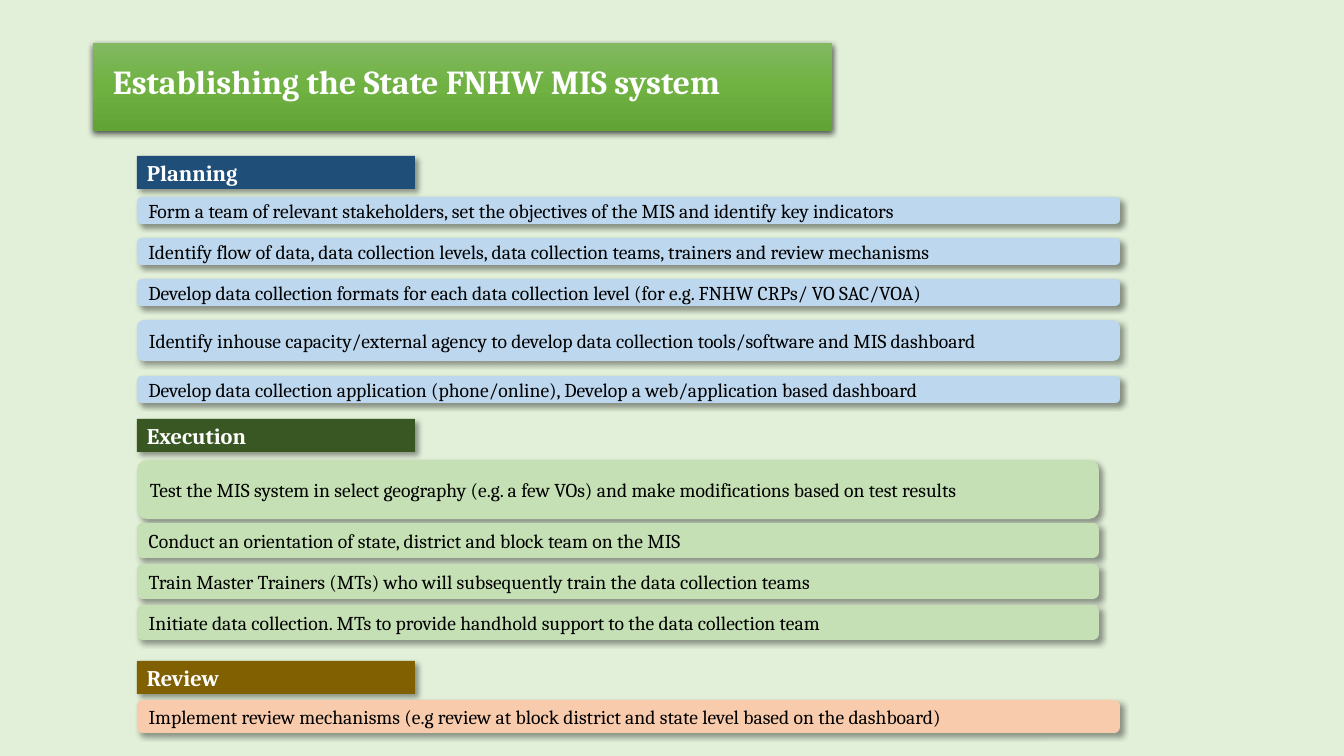
"""Build the slide on establishing the State FNHW MIS system."""
import copy
from dataclasses import dataclass

import lxml.etree
import pptx
import pptx.dml.color
import pptx.enum.shapes
import pptx.enum.text
import pptx.oxml.ns
import pptx.shapes.autoshape
import pptx.slide
import pptx.util

RGBColor = pptx.dml.color.RGBColor
Shapes = pptx.enum.shapes.MSO_SHAPE

EMU_PER_PX = 914400 / 100.8
FONT = "Cambria"
LEFT = 137
HEADING_WIDTH = 278
HEADING_HEIGHT = 33
INSET = 10

WHITE = RGBColor(0xFF, 0xFF, 0xFF)
BLACK = RGBColor(0x00, 0x00, 0x00)
BACKGROUND = RGBColor(0xE2, 0xF0, 0xD9)
NAVY = RGBColor(0x1F, 0x4E, 0x79)
LIGHT_BLUE = RGBColor(0xBD, 0xD7, 0xEE)
DARK_GREEN = RGBColor(0x38, 0x57, 0x23)
LIGHT_GREEN = RGBColor(0xC5, 0xE0, 0xB4)
BROWN = RGBColor(0x80, 0x60, 0x00)
PEACH = RGBColor(0xF8, 0xCB, 0xAD)
BANNER_STOPS = (
    (0.0, RGBColor(0x81, 0xB8, 0x61)),
    (0.5, RGBColor(0x6F, 0xB2, 0x42)),
    (1.0, RGBColor(0x62, 0xA3, 0x36)),
)


@dataclass(frozen=True)
class Box:
    """Place and size in px."""
    left: int
    top: int
    width: int
    height: int


@dataclass(frozen=True)
class Shadow:
    """Outer shadow: opacity in percent, lengths in points, angle in degrees."""
    opacity: int
    blur: float
    distance: float
    angle: int


@dataclass(frozen=True)
class Step:
    """One bar of a phase."""
    text: str
    top: int
    height: int


@dataclass(frozen=True)
class Phase:
    """A heading with its bars."""
    title: str
    top: int
    heading_color: RGBColor
    step_color: RGBColor
    step_width: int
    steps: tuple[Step, ...]


BANNER_SHADOW = Shadow(63, 4.5, 1.5, 90)
BAR_SHADOW = Shadow(40, 4, 3, 45)

PHASES = (
    Phase("Planning", 156, NAVY, LIGHT_BLUE, 983, (
        Step("Form a team of relevant stakeholders, set the objectives of the MIS and identify key indicators", 197, 27),
        Step("Identify flow of data, data collection levels, data collection teams, trainers and review mechanisms", 238, 27),
        Step("Develop data collection formats for each data collection level (for e.g. FNHW CRPs/ VO SAC/VOA)", 279, 27),
        Step("Identify inhouse capacity/external agency to develop data collection tools/software and MIS dashboard", 320, 41),
        Step("Develop data collection application (phone/online), Develop a web/application based dashboard", 376, 27),
    )),
    Phase("Execution", 419, DARK_GREEN, LIGHT_GREEN, 962, (
        Step("Test the MIS system in select geography (e.g. a few VOs) and make modifications based on test results", 460, 59),
        Step("Conduct an orientation of state, district and block team on the MIS", 523, 35),
        Step("Train Master Trainers (MTs) who will subsequently train the data collection teams", 564, 35),
        Step("Initiate data collection. MTs to provide handhold support to the data collection team", 605, 35),
    )),
    Phase("Review", 661, BROWN, PEACH, 983, (
        Step("Implement review mechanisms (e.g review at block district and state level based on the dashboard)", 700, 33),
    )),
)


def px(length: int) -> pptx.util.Emu:
    """Turn px into EMU."""
    return pptx.util.Emu(round(length * EMU_PER_PX))


def place(box: Box) -> tuple[pptx.util.Emu, ...]:
    """Give the box in EMU."""
    return px(box.left), px(box.top), px(box.width), px(box.height)


def write(frame, text: str, *, size: int, color: RGBColor, bold: bool = False,
          inset: int = INSET, line_spacing: float = 1.0) -> None:
    """Write one left-aligned, vertically centred paragraph."""
    frame.word_wrap = True
    frame.vertical_anchor = pptx.enum.text.MSO_ANCHOR.MIDDLE
    frame.margin_left = px(inset)
    paragraph = frame.paragraphs[0]
    paragraph.alignment = pptx.enum.text.PP_ALIGN.LEFT
    paragraph.line_spacing = line_spacing
    run = paragraph.add_run()
    run.text = text
    run.font.name = FONT
    run.font.size = pptx.util.Pt(size)
    run.font.bold = bold
    run.font.color.rgb = color


def cast_shadow(shape: pptx.shapes.autoshape.Shape, shadow: Shadow) -> None:
    """Give the shape a black outer shadow."""
    qn = pptx.oxml.ns.qn
    shape.shadow.inherit = False
    effects = shape._element.spPr.find(qn("a:effectLst"))
    outer = lxml.etree.SubElement(effects, qn("a:outerShdw"), {
        "blurRad": str(pptx.util.Pt(shadow.blur)),
        "dist": str(pptx.util.Pt(shadow.distance)),
        "dir": str(shadow.angle * 60000),
        "algn": "ctr",
        "rotWithShape": "0",
    })
    black = lxml.etree.SubElement(outer, qn("a:srgbClr"), {"val": str(BLACK)})
    lxml.etree.SubElement(black, qn("a:alpha"), {"val": str(shadow.opacity * 1000)})


def add_block(slide: pptx.slide.Slide, kind: Shapes, box: Box,
              shadow: Shadow) -> pptx.shapes.autoshape.Shape:
    """Add a shadowed shape without outline."""
    block = slide.shapes.add_shape(kind, *place(box))
    block.line.fill.background()
    cast_shadow(block, shadow)
    return block


def add_banner(slide: pptx.slide.Slide) -> None:
    """Draw the gradient banner and the slide title."""
    banner = add_block(slide, Shapes.RECTANGLE, Box(93, 43, 739, 88), BANNER_SHADOW)
    banner.fill.gradient()
    banner.fill.gradient_angle = 270
    first_stop = next(banner._element.spPr.iter(pptx.oxml.ns.qn("a:gs")))
    first_stop.addnext(copy.deepcopy(first_stop))
    for stop, (position, color) in zip(banner.fill.gradient_stops, BANNER_STOPS):
        stop.position = position
        stop.color.rgb = color
    title = slide.shapes.add_textbox(*place(Box(95, 55, 771, 57)))
    write(title.text_frame, "Establishing the State FNHW MIS system",
          size=24, color=WHITE, bold=True, inset=18, line_spacing=0.9)


def add_phase(slide: pptx.slide.Slide, phase: Phase) -> None:
    """Draw a phase heading and its steps."""
    heading_box = Box(LEFT, phase.top, HEADING_WIDTH, HEADING_HEIGHT)
    heading = add_block(slide, Shapes.RECTANGLE, heading_box, BAR_SHADOW)
    heading.fill.solid()
    heading.fill.fore_color.rgb = phase.heading_color
    write(heading.text_frame, phase.title, size=16, color=WHITE, bold=True)
    for step in phase.steps:
        step_box = Box(LEFT, step.top, phase.step_width, step.height)
        bar = add_block(slide, Shapes.ROUNDED_RECTANGLE, step_box, BAR_SHADOW)
        bar.fill.solid()
        bar.fill.fore_color.rgb = phase.step_color
        write(bar.text_frame, step.text, size=14, color=BLACK)


def main() -> None:
    """Build and save the slide."""
    deck = pptx.Presentation()
    deck.slide_width, deck.slide_height = px(1344), px(756)
    slide = deck.slides.add_slide(deck.slide_layouts[6])
    slide.background.fill.solid()
    slide.background.fill.fore_color.rgb = BACKGROUND
    add_banner(slide)
    for phase in PHASES:
        add_phase(slide, phase)
    deck.save("out.pptx")


if __name__ == "__main__":
    main()
